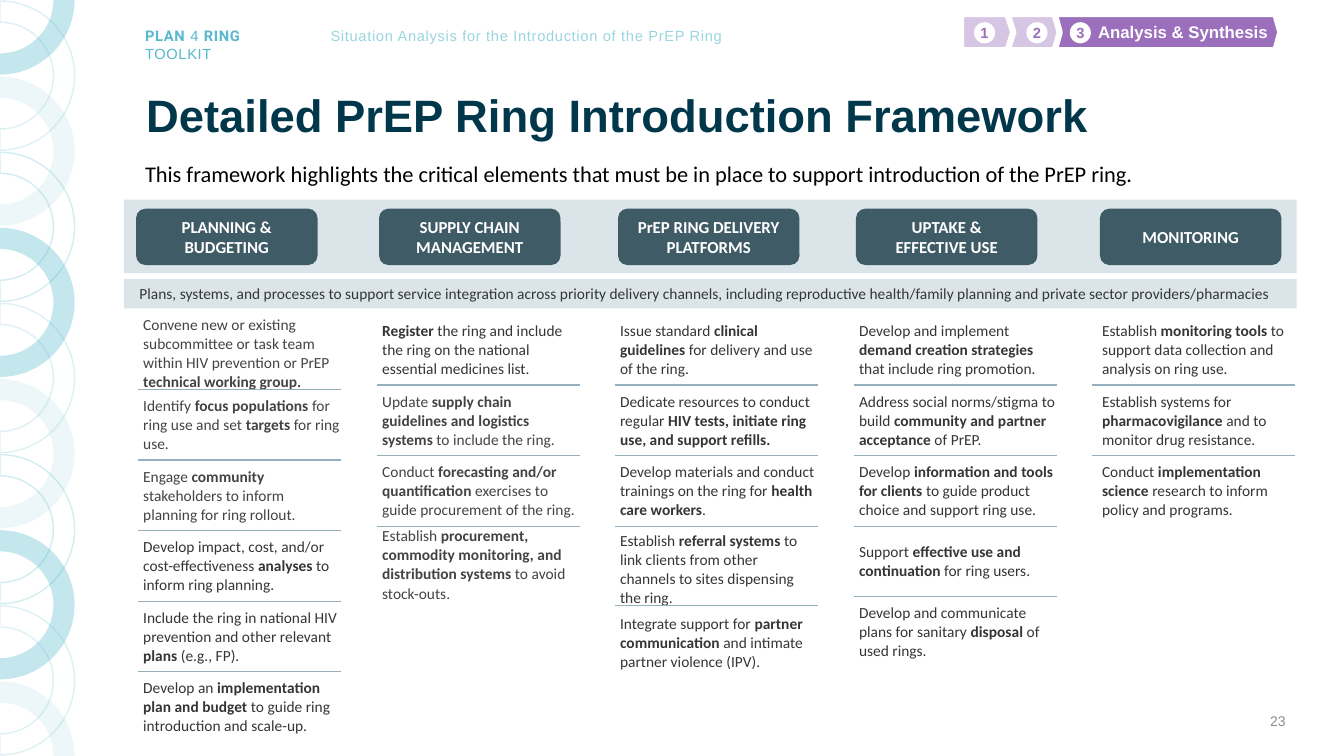
from dataclasses import dataclass
from math import cos, radians, sin

from lxml import etree
from pptx import Presentation
from pptx.dml.color import RGBColor
from pptx.enum.shapes import MSO_SHAPE
from pptx.enum.text import MSO_ANCHOR, PP_ALIGN
from pptx.oxml.ns import qn
from pptx.util import Inches, Pt

LEFT, CENTER, RIGHT = PP_ALIGN.LEFT, PP_ALIGN.CENTER, PP_ALIGN.RIGHT
TOP, MIDDLE = MSO_ANCHOR.TOP, MSO_ANCHOR.MIDDLE
RECTANGLE, ROUNDED = MSO_SHAPE.RECTANGLE, MSO_SHAPE.ROUNDED_RECTANGLE
PENTAGON, OVAL = MSO_SHAPE.PENTAGON, MSO_SHAPE.OVAL

COLORS = {
    "teal": "56B9CC", "pale_teal": "9AD5E0", "navy": "00374B", "purple": "9C6FBD",
    "white": "FFFFFF", "black": "000000", "number": "8C8C8C", "header_band": "DBE4E8",
    "service_band": "DBE5E9", "pill": "3F5B66", "rule": "94B0BC",
    "dark": "353535", "gray": "434343",
}
NO_GRID_STYLE = "{2D5ABB26-0587-4C30-8999-92F81FD0307C}"
OUTER_RADIUS, INNER_RADIUS = 0.74, 0.53
LAST_RING = 10


@dataclass
class RingStyle:
    filled: bool
    opacity: int


@dataclass
class Step:
    number: str
    left: float
    width: float
    circle_left: float
    adjustment: float
    opacity: int = 100
    label: str = ""


@dataclass
class Pillar:
    heading: list[str]
    pill_left: float
    table_left: float
    items: list[str]
    heights: list[float]
    gray_rows: range = range(0)
    deep_rows: range = range(0)
    indent: float = 0.05


RING_STYLES = [RingStyle(True, 35), RingStyle(False, 20), RingStyle(True, 10), RingStyle(False, 25)]

STEPS = [
    Step("3", 10.46, 2.24, 10.61, 0.14, label="Analysis & Synthesis"),
    Step("2", 9.99, 0.52, 10.18, 0.14, 40),
    Step("1", 9.53, 0.52, 9.66, 0.16, 40),
]

PILLARS = [
    Pillar(["PLANNING &", "BUDGETING"], 1.35, 1.37, [
        "Convene new or existing subcommittee or task team within HIV prevention or PrEP *technical working group.*",
        "Identify *focus populations *for ring use and set *targets* for ring use.",
        "Engage *community *stakeholders to inform planning for ring rollout.",
        "Develop impact, cost, and/or cost-effectiveness* analyses *to inform ring planning.",
        "Include the ring in national HIV prevention and other relevant *plans *(e.g., FP).",
        "Develop an* implementation plan and budget *to guide ring introduction and scale-up.",
    ], [0.62] + [0.7] * 5, gray_rows=range(3)),
    Pillar(["SUPPLY CHAIN MANAGEMENT"], 3.76, 3.74, [
        "*Register* the ring and include the ring on the national essential medicines list.",
        "Update *supply chain guidelines and logistics systems *to include the ring.",
        "Conduct *forecasting and/or quantification* exercises to guide procurement of the ring.",
        "Establish* procurement, commodity monitoring, and distribution systems *to avoid stock-outs.",
    ], [0.7] * 3 + [0.75], gray_rows=range(1, 4)),
    Pillar(["PrEP RING DELIVERY PLATFORMS"], 6.13, 6.1, [
        "Issue standard* clinical guidelines *for delivery and use of the ring.",
        "Dedicate resources to conduct regular *HIV tests, initiate ring use, and support refills.*",
        "Develop materials and conduct trainings on the ring for *health care workers*.",
        "Establish *referral systems *to link clients from other channels to sites dispensing the ring.",
        "Integrate support for *partner communication* and intimate partner violence (IPV).",
    ], [0.7] * 5, deep_rows=range(3, 5)),
    Pillar(["UPTAKE &", "EFFECTIVE USE"], 8.49, 8.47, [
        "Develop and implement *demand creation strategies *that include ring promotion.",
        "Address social norms/stigma to build *community and partner acceptance* of PrEP.",
        "Develop *information and tools for clients *to guide product choice and support ring use.",
        "Support *effective use and continuation* for ring users.",
        "Develop and communicate plans for sanitary *disposal* of used rings.",
    ], [0.7] * 5),
    Pillar(["MONITORING"], 10.91, 10.83, [
        "Establish* monitoring tools* to support data collection and analysis on ring use.",
        "Establish systems for *pharmacovigilance* and to monitor drug resistance.",
        "Conduct *implementation science *research to inform policy and programs.",
    ], [0.7] * 3, indent=0.1),
]


def color(name: str) -> RGBColor:
    return RGBColor.from_string(COLORS[name])


def add_run(paragraph, text: str, size: float, color_name: str, bold: bool = False,
            font: str = "Arial", spaced: bool = False) -> None:
    run = paragraph.add_run()
    run.text = text
    run.font.size, run.font.bold, run.font.name = Pt(size), bold, font
    run.font.color.rgb = color(color_name)
    if spaced:
        run._r.get_or_add_rPr().set("spc", "50")


def set_frame(shape, align=LEFT, anchor=TOP, margins=(0.1, 0.05, 0.1, 0.05), wrap=True):
    frame = shape.text_frame
    frame.word_wrap, frame.vertical_anchor = wrap, anchor
    (frame.margin_left, frame.margin_top,
     frame.margin_right, frame.margin_bottom) = [Inches(margin) for margin in margins]
    frame.paragraphs[0].alignment = align
    return frame.paragraphs[0]


def add_text_box(slide, box: tuple, align=LEFT, anchor=TOP):
    return set_frame(slide.shapes.add_textbox(*map(Inches, box)), align, anchor)


def set_opacity(shape, percent: int) -> None:
    for node in shape.element.spPr.iter(qn("a:srgbClr")):
        etree.SubElement(node, qn("a:alpha")).set("val", str(percent * 1000))


def add_block(slide, kind, box: tuple, fill: str):
    shape = slide.shapes.add_shape(kind, *map(Inches, box))
    shape.shadow.inherit = False
    shape.fill.solid()
    shape.fill.fore_color.rgb = color(fill)
    shape.line.fill.background()
    return shape


def add_ring(slide, index: int) -> None:
    style = RING_STYLES[index % 4]
    angles = [0, 90] if index == 0 else [-90, 0] if index == LAST_RING else [-90, 0, 90]
    corners = ([(OUTER_RADIUS, angle) for angle in angles]
               + [(INNER_RADIUS, angle) for angle in reversed(angles)])
    points = [(Inches(radius * cos(radians(angle))),
               Inches(0.75 * index + radius * sin(radians(angle)))) for radius, angle in corners]
    builder = slide.shapes.build_freeform(*points[0])
    builder.add_line_segments(points[1:], close=True)
    shape = builder.convert_to_shape()
    segments = list(shape.element.spPr.iter(qn("a:lnTo")))
    for segment, (radius, start), (next_radius, end) in zip(segments, corners, corners[1:]):
        if radius == next_radius:
            size = str(Inches(radius))
            arc = etree.Element(qn("a:arcTo"), wR=size, hR=size, stAng=str(start % 360 * 60000),
                                swAng=str((end - start) * 60000))
            segment.getparent().replace(segment, arc)
    shape.shadow.inherit = False
    visible, hidden = (shape.fill, shape.line.fill) if style.filled else (shape.line.fill, shape.fill)
    visible.solid()
    visible.fore_color.rgb = color("teal")
    hidden.background()
    if not style.filled:
        shape.line.width = Pt(1)
    set_opacity(shape, style.opacity)


def add_step(slide, step: Step) -> None:
    arrow = add_block(slide, PENTAGON, (step.left, 0.14, step.width, 0.36), "purple")
    arrow.adjustments[0] = step.adjustment
    set_opacity(arrow, step.opacity)
    arrow.line.color.rgb = color("white")
    arrow.line.width = Pt(4.5)
    if step.label:
        add_run(set_frame(arrow, RIGHT, MIDDLE), step.label, 12, "white", True)
    circle = add_block(slide, OVAL, (step.circle_left, 0.22, 0.21, 0.21), "white")
    add_run(set_frame(circle, CENTER, MIDDLE, (0, 0, 0, 0), False), step.number, 10.5, "purple", True)


def add_rule(cell, edge: str) -> None:
    line = etree.SubElement(cell._tc.get_or_add_tcPr(), qn(edge), w=str(Pt(1)))
    fill = etree.SubElement(line, qn("a:solidFill"))
    etree.SubElement(fill, qn("a:srgbClr"), val=COLORS["rule"])


def add_pillar(slide, pillar: Pillar) -> None:
    pill = add_block(slide, ROUNDED, (pillar.pill_left, 2.07, 1.8, 0.56), "pill")
    paragraph = set_frame(pill, CENTER, MIDDLE)
    for index, line in enumerate(pillar.heading):
        if index:
            paragraph = pill.text_frame.add_paragraph()
            paragraph.alignment = CENTER
        add_run(paragraph, line, 12, "white", True, "Calibri")

    count = len(pillar.items)
    box = (pillar.table_left, 3.12, 2.01, sum(pillar.heights))
    table = slide.shapes.add_table(count, 1, *map(Inches, box)).table
    table.first_row = table.horz_banding = False
    table._tbl.tblPr.find(qn("a:tableStyleId")).text = NO_GRID_STYLE
    for row, (item, height) in enumerate(zip(pillar.items, pillar.heights)):
        table.rows[row].height = Inches(height)
        cell = table.cell(row, 0)
        if row > 0:
            add_rule(cell, "a:lnT")
        if row < count - 1:
            add_rule(cell, "a:lnB")
        cell.fill.background()
        cell.vertical_anchor = MIDDLE
        cell.margin_left, cell.margin_right = Inches(pillar.indent), Inches(0.01)
        cell.margin_top, cell.margin_bottom = Inches(0.05 if row in pillar.deep_rows else 0.01), 0
        shade = "gray" if row in pillar.gray_rows else "dark"
        for part, text in enumerate(item.split("*")):
            if text:
                add_run(cell.text_frame.paragraphs[0], text, 11, shade, part % 2 == 1, "Calibri")


def main() -> None:
    presentation = Presentation()
    presentation.slide_width, presentation.slide_height = Inches(13.33), Inches(7.5)
    slide = presentation.slides.add_slide(presentation.slide_layouts[5])

    toolkit = add_text_box(slide, (1.34, 0.22, 1.84, 0.28))
    add_run(toolkit, "PLAN", 10.5, "teal", True, "Roboto", True)
    add_run(toolkit, " 4 ", 10.5, "teal", spaced=True)
    add_run(toolkit, "RING", 10.5, "teal", True, "Roboto", True)
    toolkit.add_line_break()
    add_run(toolkit, "TOOLKIT", 10.5, "teal", spaced=True)
    add_run(add_text_box(slide, (3.14, 0.22, 4.17, 0.28), CENTER),
            "Situation Analysis for the Introduction of the PrEP Ring", 10.5, "pale_teal", spaced=True)

    for index in range(LAST_RING + 1):
        add_ring(slide, index)
    for step in STEPS:
        add_step(slide, step)

    title = slide.shapes.title
    title.left, title.top, title.width, title.height = map(Inches, (1.35, 0.89, 11.19, 0.56))
    heading = set_frame(title, LEFT, MIDDLE)
    heading.line_spacing = 0.9
    add_run(heading, "Detailed PrEP Ring Introduction Framework", 32.4, "navy", True)
    add_run(add_text_box(slide, (9.85, 6.95, 3, 0.4), RIGHT, MIDDLE), "23", 10, "number")
    summary = add_text_box(slide, (1.34, 1.51, 11.1, 0.35))
    summary.line_spacing = 1.1
    add_run(summary, "This framework highlights the critical elements that must be in place "
            "to support introduction of the PrEP ring.", 16, "black", font="Calibri")

    add_block(slide, RECTANGLE, (1.23, 1.98, 11.63, 0.73), "header_band")
    for pillar in PILLARS:
        add_pillar(slide, pillar)
    band = add_block(slide, RECTANGLE, (1.23, 2.77, 11.63, 0.29), "service_band")
    add_run(set_frame(band, CENTER, TOP, (0.1, 0.05, 0.2, 0.05)),
            "Plans, systems, and processes to support service integration across priority delivery "
            "channels, including reproductive health/family planning and private sector "
            "providers/pharmacies", 11, "dark", font="Calibri")
    presentation.save("out.pptx")


if __name__ == "__main__":
    main()
